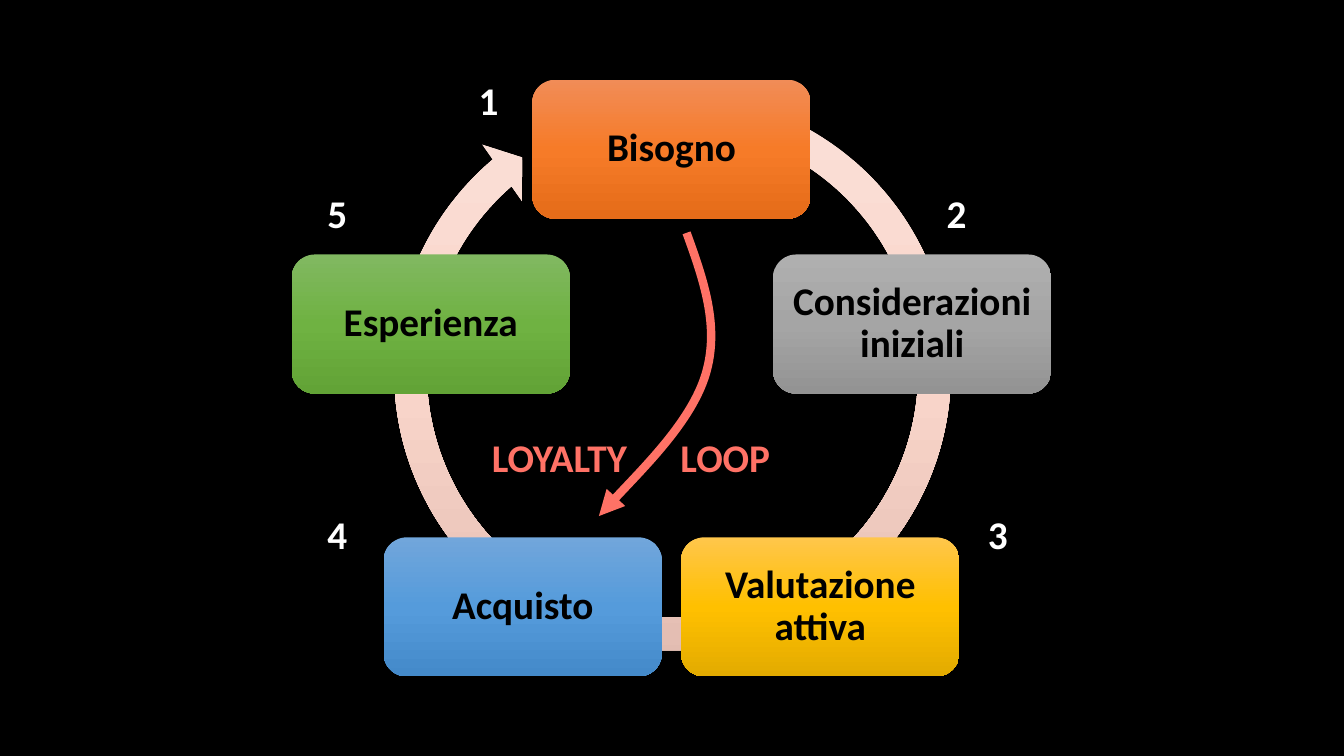
"""Build the five-step loyalty loop slide."""
from copy import deepcopy
from math import cos, radians, sin

from lxml import etree
from pptx import Presentation
from pptx.dml.color import RGBColor
from pptx.enum.shapes import MSO_SHAPE
from pptx.enum.text import MSO_ANCHOR, PP_ALIGN
from pptx.oxml.ns import qn
from pptx.util import Inches, Pt

ROUNDED = MSO_SHAPE.ROUNDED_RECTANGLE
CIRCULAR_ARROW = MSO_SHAPE.CIRCULAR_ARROW
MIDDLE = MSO_ANCHOR.MIDDLE
CENTER = PP_ALIGN.CENTER

BLACK = RGBColor(0x00, 0x00, 0x00)
WHITE = RGBColor(0xFF, 0xFF, 0xFF)
CORAL = RGBColor(0xFF, 0x72, 0x66)
PINK = (RGBColor(0xFA, 0xE0, 0xD8), RGBColor(0xFA, 0xD6, 0xCB), RGBColor(0xE2, 0xBC, 0xB1))
ORANGE = (RGBColor(0xF1, 0x8C, 0x57), RGBColor(0xF6, 0x7B, 0x28), RGBColor(0xE5, 0x6C, 0x19))
GRAY = (RGBColor(0xAF, 0xAF, 0xAF), RGBColor(0xA5, 0xA5, 0xA5), RGBColor(0x93, 0x93, 0x93))
YELLOW = (RGBColor(0xFF, 0xC6, 0x4B), RGBColor(0xFF, 0xC0, 0x00), RGBColor(0xE3, 0xAB, 0x00))
BLUE = (RGBColor(0x71, 0xA6, 0xDB), RGBColor(0x55, 0x9B, 0xDB), RGBColor(0x44, 0x8A, 0xCA))
GREEN = (RGBColor(0x81, 0xB8, 0x61), RGBColor(0x6F, 0xB2, 0x42), RGBColor(0x62, 0xA3, 0x36))

CENTER_X, CENTER_Y, RADIUS = 6.66, 3.99, 2.51
STEP_WIDTH, STEP_HEIGHT = 2.76, 1.38
STEPS = [
    ("Bisogno", ORANGE, 4.65, 0.71),
    ("Considerazioni iniziali", GRAY, 9.29, 1.83),
    ("Valutazione attiva", YELLOW, 9.7, 5.01),
    ("Acquisto", BLUE, 3.15, 5.01),
    ("Esperienza", GREEN, 3.15, 1.83),
]
LOOP_CURVE = [
    (6.81, 2.31),
    (6.98, 2.78), (7.14, 3.24), (7, 3.71),
    (6.86, 4.18), (6.16, 4.87), (5.94, 5.12),
]


class LoopSlide:
    """Holds the text style and the slide being drawn."""

    def __init__(self, slide, font_name, font_size):
        self.slide = slide
        self.font_name = font_name
        self.font_size = Pt(font_size)

    def background(self, color):
        fill = self.slide.background.fill
        fill.solid()
        fill.fore_color.rgb = color

    def style_text(self, paragraph, color):
        for run in paragraph.runs:
            run.font.name = self.font_name
            run.font.size = self.font_size
            run.font.bold = True
            run.font.color.rgb = color

    def gradient_shape(self, kind, left, top, width, height, colors):
        shape = self.slide.shapes.add_shape(
            kind, Inches(left), Inches(top), Inches(width), Inches(height))
        shape.shadow.inherit = False
        shape.line.fill.background()
        shape.fill.gradient()
        shape.fill.gradient_angle = 270
        stop_list = shape._element.spPr.find(".//" + qn("a:gsLst"))
        stop_list.insert(1, deepcopy(stop_list[0]))
        for index, (stop, color) in enumerate(zip(shape.fill.gradient_stops, colors)):
            stop.position = index / 2
            stop.color.rgb = color
        return shape

    def ring(self, left, top, size, adjustments):
        shape = self.gradient_shape(CIRCULAR_ARROW, left, top, size, size, PINK)
        for index, value in enumerate(adjustments):
            shape.adjustments[index] = value

    def step(self, text, center_x, center_y, colors):
        shape = self.gradient_shape(
            ROUNDED, center_x - STEP_WIDTH / 2, center_y - STEP_HEIGHT / 2,
            STEP_WIDTH, STEP_HEIGHT, colors)
        frame = shape.text_frame
        frame.text = text
        frame.word_wrap = True
        frame.vertical_anchor = MIDDLE
        frame.margin_left = frame.margin_right = Inches(0.12)
        frame.margin_top = frame.margin_bottom = Inches(0.12)
        paragraph = frame.paragraphs[0]
        paragraph.alignment = CENTER
        paragraph.line_spacing = 0.9
        self.style_text(paragraph, BLACK)

    def label(self, text, left, top, width, color, tab=None):
        box = self.slide.shapes.add_textbox(
            Inches(left), Inches(top), Inches(width), Inches(0.57))
        frame = box.text_frame
        frame.text = text
        frame.word_wrap = True
        frame.margin_right = 0
        paragraph = frame.paragraphs[0]
        if tab:
            tab_list = etree.SubElement(paragraph._p.get_or_add_pPr(), qn("a:tabLst"))
            etree.SubElement(tab_list, qn("a:tab"), pos=str(Inches(tab)), algn="l")
        self.style_text(paragraph, color)

    def curved_arrow(self, points, color, width):
        corners = [(Inches(x), Inches(y)) for x, y in points]
        builder = self.slide.shapes.build_freeform(*corners[0])
        builder.add_line_segments(corners[1:], close=False)
        shape = builder.convert_to_shape()
        shape.shadow.inherit = False
        shape.fill.background()
        shape.line.color.rgb = color
        shape.line.width = Pt(width)
        path = shape._element.spPr.find(".//" + qn("a:path"))
        segments = path.findall(qn("a:lnTo"))
        for start in range(0, len(segments), 3):
            curve = etree.SubElement(path, qn("a:cubicBezTo"))
            for segment in segments[start:start + 3]:
                curve.append(segment[0])
                path.remove(segment)
        etree.SubElement(shape.line._get_or_add_ln(), qn("a:tailEnd"), type="triangle")


def main():
    presentation = Presentation()
    presentation.slide_width = Inches(13.33)
    presentation.slide_height = Inches(7.5)
    slide = presentation.slides.add_slide(presentation.slide_layouts[6])
    loop = LoopSlide(slide, "Calibri", 28)
    loop.background(BLACK)
    loop.ring(3.73, 0.75, 5.88, (0.055, 3.307, 137.676, 173.91, 0.058))
    for index, (text, colors, _, _) in enumerate(STEPS):
        angle = radians(index * 360 / len(STEPS))
        loop.step(text, CENTER_X + RADIUS * sin(angle), CENTER_Y - RADIUS * cos(angle), colors)
    for number, (_, _, left, top) in enumerate(STEPS, start=1):
        loop.label(str(number), left, top, 0.4, WHITE)
    loop.curved_arrow(LOOP_CURVE, CORAL, 6)
    loop.label("LOYALTY\tLOOP", 4.78, 4.25, 2.99, CORAL, tab=1.87)
    presentation.save("out.pptx")


if __name__ == "__main__":
    main()
